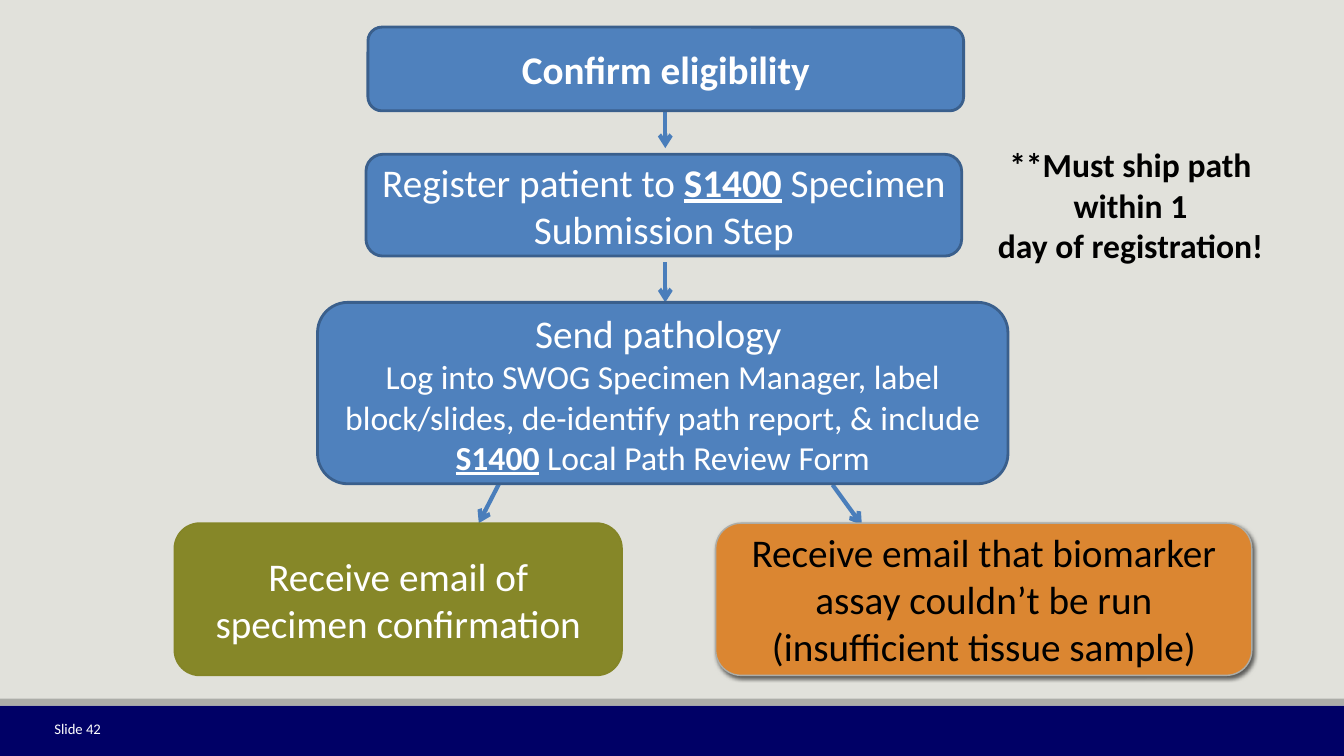
"""Build the specimen submission flowchart slide."""
from lxml import etree
from pptx import Presentation, util as u
from pptx.dml.color import RGBColor
from pptx.enum import shapes, text
from pptx.oxml import parse_xml
from pptx.oxml.ns import nsdecls, qn

COLORS = {
    "bg": "E1E1DB", "navy": "000066", "gray": "ACADA8", "blue": "4F81BD",
    "blue_edge": "3A5F8C", "arrow": "4A7EBB", "olive": "868728",
    "olive_edge": "848527", "orange": "DB8631", "white": "FFFFFF", "black": "000000",
}


def rgb(name):
    return RGBColor.from_string(COLORS[name])


def write(s, paragraphs, color="white", bold=False, align="CENTER", anchor="MIDDLE"):
    """Fill a shape with (size, runs) paragraphs; every second run is bold and underlined."""
    tf = s.text_frame
    tf.word_wrap = True
    tf.vertical_anchor = text.MSO_ANCHOR[anchor]
    for i, (size, runs) in enumerate(paragraphs):
        p = tf.add_paragraph() if i else tf.paragraphs[0]
        p.alignment = text.PP_ALIGN[align]
        for j, words in enumerate(runs):
            r = p.add_run()
            r.text = words
            r.font.name = "Calibri"
            r.font.size = u.Pt(size)
            r.font.bold = bold or j % 2 == 1
            r.font.underline = j % 2 == 1
            r.font.color.rgb = rgb(color)


prs = Presentation()
prs.slide_width, prs.slide_height = u.Pt(960), u.Pt(540)
slide = prs.slides.add_slide(prs.slide_layouts[6])
slide.background.fill.solid()
slide.background.fill.fore_color.rgb = rgb("bg")

for top, height, fill in [(504, 36, "navy"), (499, 5, "gray")]:
    s = slide.shapes.add_shape(
        shapes.MSO_SHAPE.RECTANGLE, 0, u.Pt(top), prs.slide_width, u.Pt(height))
    s.shadow.inherit = False
    s.fill.solid()
    s.fill.fore_color.rgb = rgb(fill)
    s.line.fill.background()

arrows = [
    (475.2, 79.2, 475.2, 105.8),
    (475.2, 187.2, 475.2, 216),
    (356.4, 345.6, 342, 373.7),
    (594.7, 346.3, 615.6, 375.1),
]
for ends in arrows:
    s = slide.shapes.add_connector(shapes.MSO_CONNECTOR.STRAIGHT, *map(u.Pt, ends))
    s.line.color.rgb = rgb("arrow")
    s.line.width = u.Pt(3)
    etree.SubElement(s.line._get_or_add_ln(), qn("a:tailEnd"), type="arrow")
    etree.SubElement(s._element.spPr, qn("a:effectLst"))

steps = [
    ((262.8, 19.4, 425.5, 59.8), "blue", "blue_edge", 2, "white", True,
     [(28, ["Confirm eligibility"])]),
    ((261.4, 110.2, 425.5, 72.7), "blue", "blue_edge", 2, "white", False,
     [(28, ["Register patient to ", "S1400", " Specimen Submission Step"])]),
    ((226.8, 216, 493.2, 129.6), "blue", "blue_edge", 2, "white", False,
     [(28, ["Send pathology "]),
      (24, ["Log into SWOG Specimen Manager, label block/slides, "
            "de-identify path report, & include ", "S1400", " Local Path Review Form"])]),
    ((124.6, 373.7, 319.7, 108.7), "olive", "olive_edge", 1.25, "white", False,
     [(28, ["Receive email of specimen confirmation"])]),
    ((511.2, 373.7, 383, 108.7), "orange", "gray", 1, "black", False,
     [(28, ["Receive email that biomarker assay couldn’t be run "
            "(insufficient tissue sample)"])]),
]
for box, fill, edge, width, color, bold, paragraphs in steps:
    s = slide.shapes.add_shape(shapes.MSO_SHAPE.ROUNDED_RECTANGLE, *map(u.Pt, box))
    s.shadow.inherit = False
    s.fill.solid()
    s.fill.fore_color.rgb = rgb(fill)
    s.line.color.rgb = rgb(edge)
    s.line.width = u.Pt(width)
    write(s, paragraphs, color=color, bold=bold)
    if fill == "orange":
        s._element.spPr.find(qn("a:effectLst")).append(parse_xml(
            f'<a:outerShdw {nsdecls("a")} blurRad="{u.Pt(3)}" dist="{u.Pt(2)}" '
            f'dir="2700000" algn="tl" rotWithShape="0"><a:srgbClr val="{COLORS["black"]}">'
            '<a:alpha val="60000"/></a:srgbClr></a:outerShdw>'))

note = slide.shapes.add_textbox(*map(u.Pt, (687.6, 99.4, 239.8, 94.3)))
write(note, [(24, ["**Must ship path within 1"]), (24, ["day of registration!"])],
      color="black", bold=True, anchor="TOP")

number = slide.shapes.add_textbox(*map(u.Pt, (5, 506.2, 74.2, 28.8)))
write(number, [(10.5, ["Slide 42"])], align="RIGHT")

prs.save("out.pptx")
